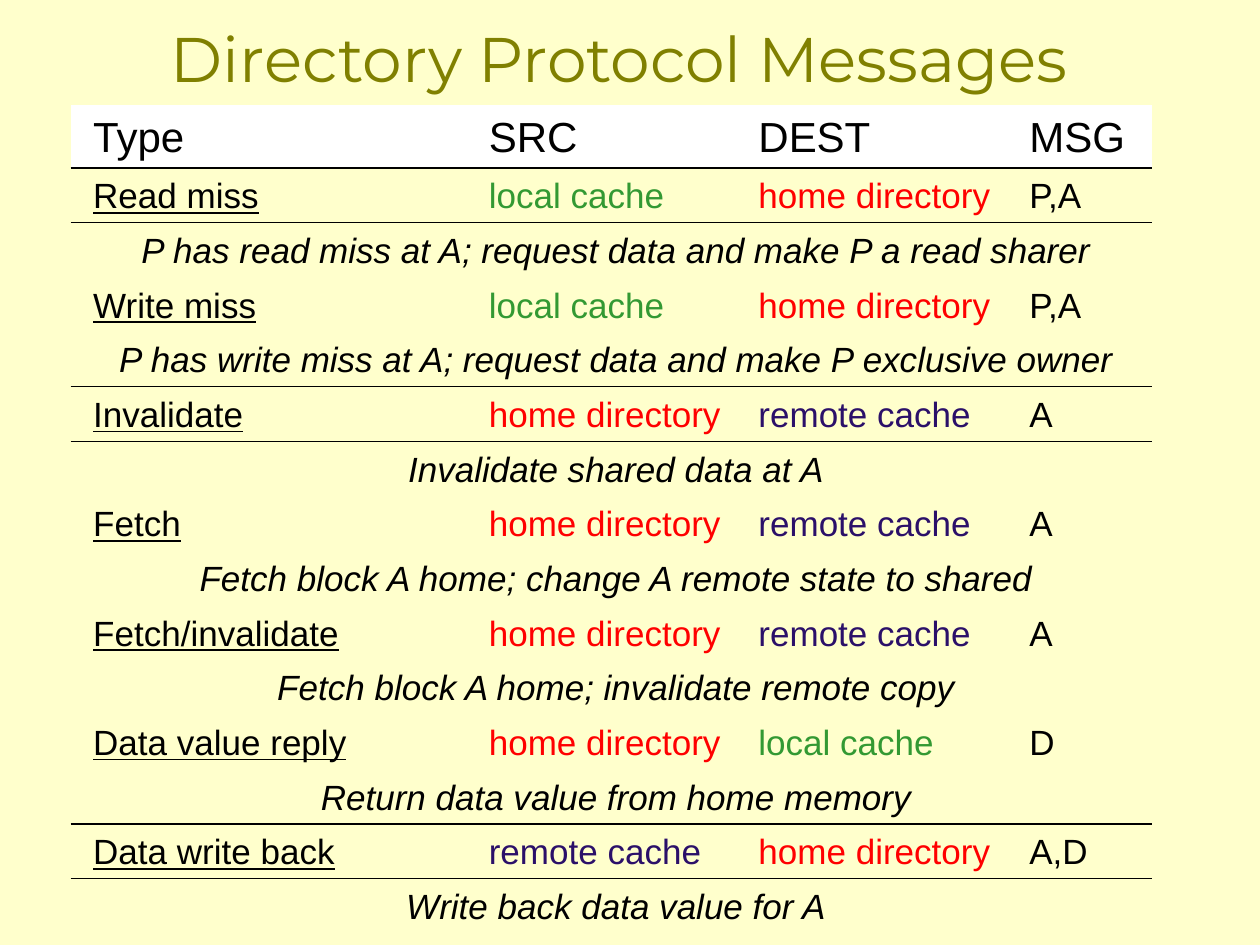
from lxml.etree import SubElement
from pptx import Presentation
from pptx.dml.color import RGBColor as RGB
from pptx.enum.text import MSO_ANCHOR as ANCHOR, PP_ALIGN as ALIGN
from pptx.oxml.ns import qn
from pptx.util import Inches, Pt

COLORS = {
    "background": "FFFFCC", "title": "808000", "header": "FFFFFF", "text": "000000",
    "local cache": "339933", "home directory": "FF0000", "remote cache": "2B1069",
}
NO_STYLE = "{2D5ABB26-0587-4C30-8999-92F81FD0307C}"
HEADER = ("Type", "SRC", "DEST", "MSG")
COL_WIDTHS = (3.14, 2.14, 2.15, 1.15)
ROW_HEIGHT = 0.38
MESSAGES = [
    ("Read miss", "local cache", "home directory", "P,A",
     "P has read miss at A; request data and make P a read sharer"),
    ("Write miss", "local cache", "home directory", "P,A",
     "P has write miss at A; request data and make P exclusive owner"),
    ("Invalidate", "home directory", "remote cache", "A",
     "Invalidate shared data at A"),
    ("Fetch", "home directory", "remote cache", "A",
     "Fetch block A home; change A remote state to shared"),
    ("Fetch/invalidate", "home directory", "remote cache", "A",
     "Fetch block A home; invalidate remote copy"),
    ("Data value reply", "home directory", "local cache", "D",
     "Return data value from home memory"),
    ("Data write back", "remote cache", "home directory", "A,D",
     "Write back data value for A"),
]
GROUP_ENDS = ("Write miss", "Data value reply")


def color(name):
    """Look up a named colour."""
    return RGB.from_string(COLORS[name])


def add_title(slide, text):
    """Place and format the title placeholder."""
    sp = slide.shapes.title
    sp.left, sp.top, sp.width, sp.height = map(Inches, (0.58, -0.17, 8.67, 1.25))
    tf = sp.text_frame
    tf.text = text
    tf.word_wrap = True
    tf.vertical_anchor = ANCHOR.MIDDLE
    p = tf.paragraphs[0]
    p.alignment = ALIGN.CENTER
    font = p.runs[0].font
    font.name, font.size = "Montserrat", Pt(36)
    font.color.rgb = color("title")


def add_plain_table(slide, rows):
    """Add an unstyled table with the message columns."""
    height = Inches(6.57)
    frame = slide.shapes.add_table(rows, len(COL_WIDTHS), Inches(0.56), Inches(0.83),
                                   Inches(sum(COL_WIDTHS)), height)
    table = frame.table
    table.horz_banding = table.first_row = False
    table._tbl.tblPr.find(qn("a:tableStyleId")).text = NO_STYLE
    for column, width in zip(table.columns, COL_WIDTHS):
        column.width = Inches(width)
    for row in table.rows:
        row.height = Inches(ROW_HEIGHT)
    frame.height = height
    for cell in table.iter_cells():
        cell.fill.background()
    return table


def fill_cell(cell, text, size=20, leading=24, align=ALIGN.LEFT, underline=None, italic=None):
    """Write one formatted line of text into a cell."""
    cell.text = text
    cell.vertical_anchor = ANCHOR.MIDDLE
    p = cell.text_frame.paragraphs[0]
    p.alignment, p.line_spacing = align, Pt(leading)
    pPr = p._p.get_or_add_pPr()
    pPr.set("marL", str(Inches(0.08)))
    pPr.set("indent", "0")
    before = SubElement(pPr, qn("a:spcBef"))
    SubElement(before, qn("a:spcPct"), val="20000")
    font = p.runs[0].font
    font.name, font.size = "Arial", Pt(size)
    font.underline, font.italic = underline, italic
    font.color.rgb = color(text if text in COLORS else "text")


def draw_edge(cell, side):
    """Draw a thin line on the bottom (lnB) or top (lnT) of a cell."""
    tcPr = cell._tc.get_or_add_tcPr()
    ln = SubElement(tcPr, qn(f"a:{side}"), w=str(Pt(1)))
    tcPr.insert(0, ln)
    fill = SubElement(ln, qn("a:solidFill"))
    SubElement(fill, qn("a:srgbClr"), val=COLORS["text"])


def rule_below(table, row):
    """Draw a line between a row and the next one."""
    for col in range(len(COL_WIDTHS)):
        draw_edge(table.cell(row, col), "lnB")
        draw_edge(table.cell(row + 1, col), "lnT")


def fill_header(table):
    """Write the heading row."""
    for cell, text in zip(table.rows[0].cells, HEADER):
        fill_cell(cell, text, size=24, leading=29)
        cell.fill.solid()
        cell.fill.fore_color.rgb = color("header")
    rule_below(table, 0)


def fill_message(table, row, message):
    """Write a message row and the merged description row below it."""
    *fields, description = message
    for col, text in enumerate(fields):
        fill_cell(table.cell(row, col), text, underline=col == 0)
    cell = table.cell(row + 1, 0)
    cell.merge(table.cell(row + 1, len(COL_WIDTHS) - 1))
    fill_cell(cell, description, align=ALIGN.CENTER, italic=True)
    if fields[0] in GROUP_ENDS:
        rule_below(table, row + 1)


def main():
    """Build the slide."""
    prs = Presentation()
    prs.slide_width, prs.slide_height = Inches(10), Inches(7.5)
    s = prs.slides.add_slide(prs.slide_layouts[5])
    s.background.fill.solid()
    s.background.fill.fore_color.rgb = color("background")
    add_title(s, "Directory Protocol Messages")
    table = add_plain_table(s, 1 + 2 * len(MESSAGES))
    fill_header(table)
    for i, message in enumerate(MESSAGES):
        fill_message(table, 1 + 2 * i, message)
    prs.save("out.pptx")


if __name__ == "__main__":
    main()
